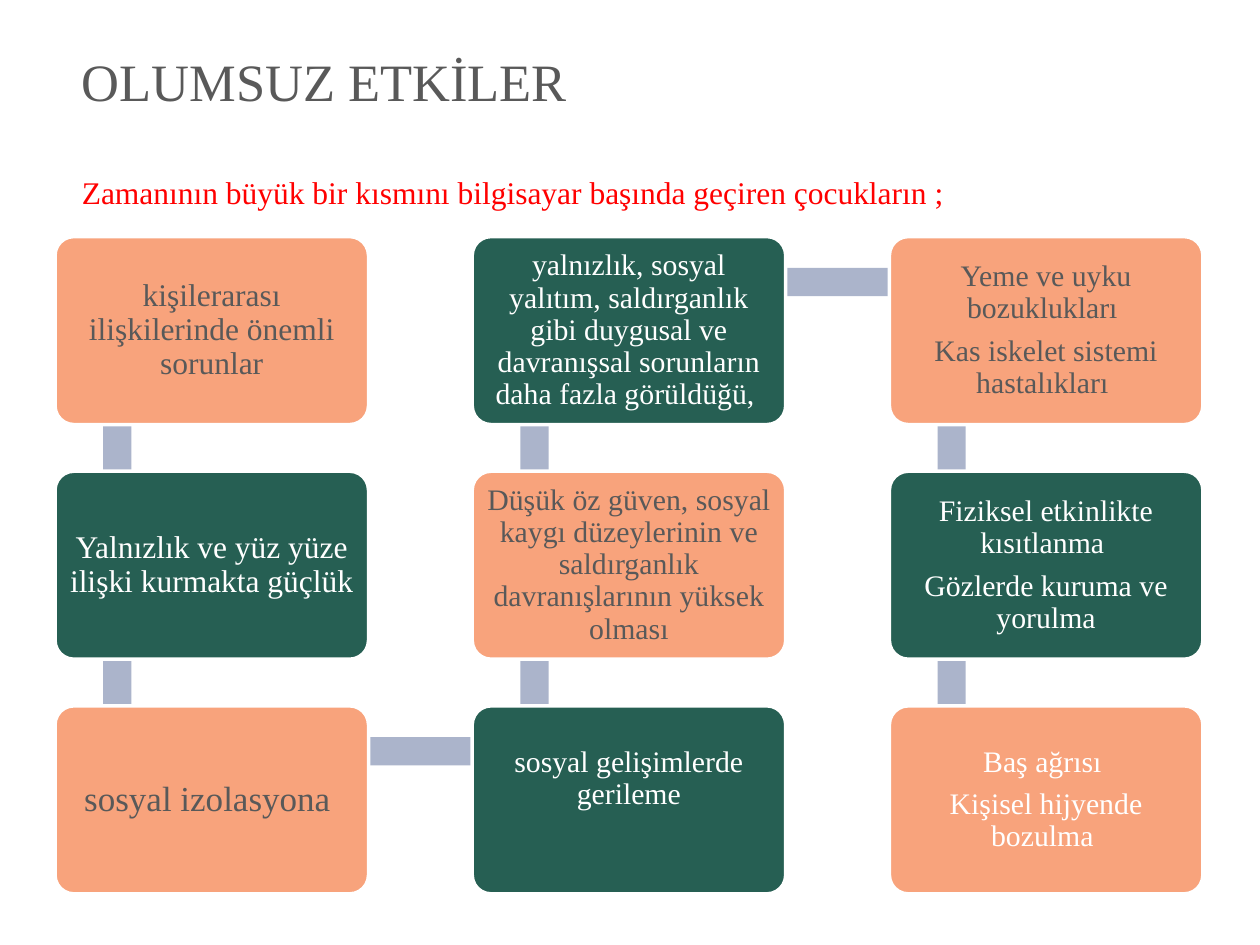
import pptx
import pptx.dml.color
import pptx.enum.shapes
import pptx.enum.text
import pptx.util
from dataclasses import dataclass
from pptx.util import Cm


@dataclass(frozen=True)
class Theme:
    font: str = "Times New Roman"
    grey: str = "595959"
    white: str = "FFFFFF"
    red: str = "FF0000"
    salmon: str = "F8A37C"
    green: str = "265F53"
    bar: str = "ABB4CB"
    heading_size: int = 30
    lead_size: int = 18
    large_size: int = 20
    medium_size: int = 18
    small_size: int = 17


THEME = Theme()

# Grid of effect boxes, in centimetres
LEFT, TOP = 1.11, 4.77
COLUMN_STEP, ROW_STEP = 8.41, 4.73
BOX_WIDTH, BOX_HEIGHT = 6.32, 3.79
BAR_WIDTH = 0.57

# Effects in order along the path: column, row, size, paragraphs
EFFECTS = [
    (0, 0, THEME.medium_size, ["kişilerarası ilişkilerinde önemli sorunlar"]),
    (0, 1, THEME.medium_size, ["Yalnızlık ve yüz yüze ilişki kurmakta güçlük "]),
    (0, 2, THEME.large_size, ["sosyal izolasyona "]),
    (1, 2, THEME.small_size, ["sosyal gelişimlerde gerileme"]),
    (1, 1, THEME.small_size, ["Düşük öz güven, sosyal kaygı düzeylerinin ve "
                              "saldırganlık davranışlarının yüksek olması"]),
    (1, 0, THEME.small_size, ["yalnızlık, sosyal yalıtım, saldırganlık gibi "
                              "duygusal ve davranışsal sorunların daha fazla "
                              "görüldüğü, "]),
    (2, 0, THEME.small_size, ["Yeme ve uyku bozuklukları ",
                              "Kas iskelet sistemi hastalıkları "]),
    (2, 1, THEME.small_size, ["Fiziksel etkinlikte kısıtlanma ",
                              "Gözlerde kuruma ve yorulma"]),
    (2, 2, THEME.small_size, ["Baş ağrısı ", "Kişisel hijyende bozulma "]),
]
RAISED_EFFECT = 3  # its text sits above the middle of the box


def rgb(color):
    return pptx.dml.color.RGBColor.from_string(color)


def assign(target, values):
    for name, value in values.items():
        setattr(target, name, value)


class EffectsSlide:
    def __init__(self, presentation, theme):
        self.theme = theme
        self.slide = presentation.slides.add_slide(presentation.slide_layouts[5])

    def add_words(self, paragraph, words, size, color, **layout):
        run = paragraph.add_run()
        run.text = words
        assign(run.font, {"name": self.theme.font, "size": pptx.util.Pt(size)})
        run.font.color.rgb = rgb(color)
        assign(paragraph, layout)

    def title(self, heading, lead):
        title = self.slide.shapes.title
        assign(title, {"left": Cm(1.4), "top": Cm(0.58),
                       "width": Cm(23.52), "height": Cm(2.36)})
        frame = title.text_frame
        assign(frame, {"vertical_anchor": pptx.enum.text.MSO_ANCHOR.TOP,
                       "auto_size": pptx.enum.text.MSO_AUTO_SIZE.NONE,
                       "word_wrap": True,
                       "margin_left": Cm(0.25), "margin_right": Cm(0.25),
                       "margin_top": Cm(0.41), "margin_bottom": Cm(0.25)})
        left = pptx.enum.text.PP_ALIGN.LEFT
        self.add_words(frame.paragraphs[0], heading, self.theme.heading_size,
                       self.theme.grey, alignment=left)
        self.add_words(frame.add_paragraph(), lead, self.theme.lead_size,
                       self.theme.red, alignment=left,
                       space_before=pptx.util.Pt(35))

    def block(self, kind, left, top, width, height, fill):
        block = self.slide.shapes.add_shape(
            kind, Cm(left), Cm(top), Cm(width), Cm(height))
        block.shadow.inherit = False
        block.fill.solid()
        block.fill.fore_color.rgb = rgb(fill)
        return block

    def bar(self, start, end):
        """Link two neighbouring cells, given as (column, row)."""
        column, row = min(start, end)
        left, top = LEFT + column * COLUMN_STEP, TOP + row * ROW_STEP
        if start[0] == end[0]:
            place = (left + 0.97, top + 0.94, BAR_WIDTH, ROW_STEP)
        else:
            place = (left + 1.3, top + 0.63, COLUMN_STEP, BAR_WIDTH)
        bar = self.block(pptx.enum.shapes.MSO_SHAPE.RECTANGLE, *place,
                         self.theme.bar)
        bar.line.fill.background()

    def box(self, column, row, size, lines, fill, color, bottom_margin):
        box = self.block(pptx.enum.shapes.MSO_SHAPE.ROUNDED_RECTANGLE,
                         LEFT + column * COLUMN_STEP, TOP + row * ROW_STEP,
                         BOX_WIDTH, BOX_HEIGHT, fill)
        box.adjustments[0] = 0.1
        box.line.color.rgb = rgb(self.theme.white)
        box.line.width = pptx.util.Pt(2)
        frame = box.text_frame
        assign(frame, {"vertical_anchor": pptx.enum.text.MSO_ANCHOR.MIDDLE,
                       "word_wrap": True,
                       "margin_left": Cm(0.18), "margin_right": Cm(0.18),
                       "margin_top": Cm(0.18), "margin_bottom": Cm(bottom_margin)})
        for number, line in enumerate(lines):
            paragraph = frame.add_paragraph() if number else frame.paragraphs[0]
            self.add_words(paragraph, line, size, color,
                           alignment=pptx.enum.text.PP_ALIGN.CENTER,
                           line_spacing=0.9, space_after=pptx.util.Pt(6))


def main():
    presentation = pptx.Presentation()
    assign(presentation, {"slide_width": Cm(25.4), "slide_height": Cm(19.05)})
    page = EffectsSlide(presentation, THEME)

    # Heading and lead sentence
    page.title("OLUMSUZ ETKİLER",
               "Zamanının büyük bir kısmını bilgisayar başında geçiren çocukların ;")

    # Bars run behind the boxes
    for current, following in zip(EFFECTS, EFFECTS[1:]):
        page.bar(current[:2], following[:2])

    # Boxes alternate in colour along the path; the last one has white text
    last = len(EFFECTS) - 1
    for index, effect in enumerate(EFFECTS):
        salmon = index % 2 == 0
        page.box(*effect,
                 fill=THEME.salmon if salmon else THEME.green,
                 color=THEME.grey if salmon and index != last else THEME.white,
                 bottom_margin=1.02 if index == RAISED_EFFECT else 0.18)

    presentation.save("out.pptx")


if __name__ == "__main__":
    main()
